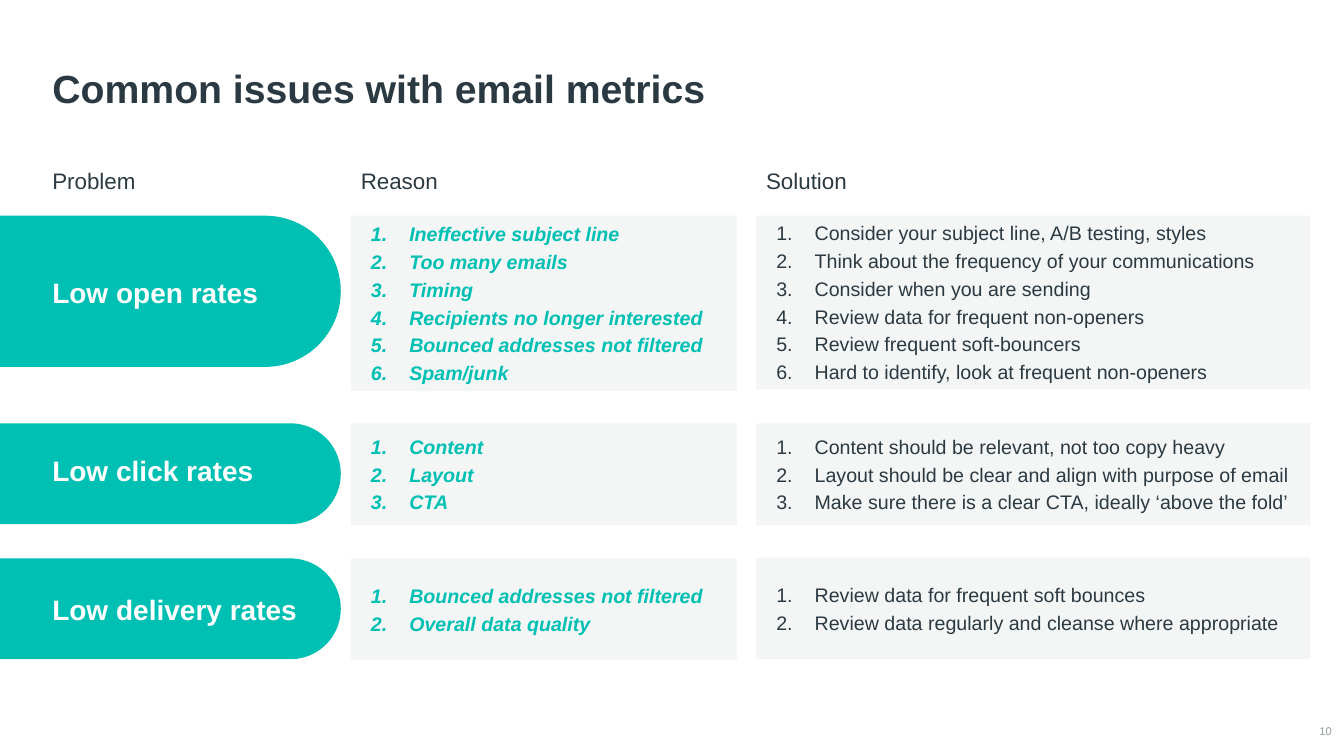
from dataclasses import dataclass
from lxml import etree
from pptx import Presentation
from pptx.dml.color import RGBColor
from pptx.enum.shapes import MSO_SHAPE
from pptx.enum.text import MSO_ANCHOR, MSO_AUTO_SIZE, PP_ALIGN
from pptx.oxml.ns import qn
from pptx.util import Inches, Pt

RECT = MSO_SHAPE.RECTANGLE
PILL = MSO_SHAPE.ROUND_2_SAME_RECTANGLE
MIDDLE, BOTTOM = MSO_ANCHOR.MIDDLE, MSO_ANCHOR.BOTTOM
LEFT, RIGHT = PP_ALIGN.LEFT, PP_ALIGN.RIGHT


@dataclass(frozen=True)
class Theme:
    font: str = "Arial"
    ink: str = "2B3A42"
    teal: str = "00BFB3"
    panel: str = "F4F5F5"
    white: str = "FFFFFF"
    gray: str = "959CA0"
    title: int = 28
    label: int = 20
    head: int = 16
    body: int = 14
    page: int = 8


theme = Theme()


def style(frame, size, color, bold=False, italic=False, anchor=MIDDLE, align=LEFT):
    frame.word_wrap = True
    frame.auto_size = MSO_AUTO_SIZE.NONE
    frame.vertical_anchor = anchor
    for par in frame.paragraphs:
        par.alignment = align
        for run in par.runs:
            font = run.font
            font.name, font.size = theme.font, Pt(size)
            font.bold, font.italic = bold, italic
            font.color.rgb = RGBColor.from_string(color)


def block(kind, left, top, width, height, color):
    """Add a flat filled shape without outline or shadow."""
    shape = slide.shapes.add_shape(
        kind, Inches(left), Inches(top), Inches(width), Inches(height))
    shape.shadow.inherit = False
    shape.fill.solid()
    shape.fill.fore_color.rgb = RGBColor.from_string(color)
    shape.line.fill.background()
    return shape


prs = Presentation()
prs.slide_width, prs.slide_height = Inches(13.33), Inches(7.5)
slide = prs.slides.add_slide(prs.slide_layouts[5])

# Title
title = slide.shapes.title
title.left, title.top = Inches(0.42), Inches(0.32)
title.width, title.height = Inches(12.4), Inches(0.84)
title.text_frame.text = "Common issues with email metrics"
title.text_frame.paragraphs[0].line_spacing = 0.9
style(title.text_frame, theme.title, theme.ink, bold=True, anchor=BOTTOM)

# Column heads
EDGE, REASON, SOLVE = 0.42, 3.48, 7.5
for left, text in ((EDGE, "Problem"), (REASON, "Reason"), (SOLVE, "Solution")):
    head = slide.shapes.add_textbox(
        Inches(left), Inches(1.61), Inches(2.82), Inches(0.37))
    head.text_frame.text = text
    style(head.text_frame, theme.head, theme.ink)

# Rows: problem, label top, pill top and height,
# then top, height and items of the reason and solution panels
rows = [
    ("Low open rates", 2.46, 2.14, 1.5,
     (2.14, 1.74, ["Ineffective subject line", "Too many emails", "Timing",
                   "Recipients no longer interested",
                   "Bounced addresses not filtered", "Spam/junk"]),
     (2.14, 1.72, ["Consider your subject line, A/B testing, styles",
                   "Think about the frequency of your communications",
                   "Consider when you are sending",
                   "Review data for frequent non-openers",
                   "Review frequent soft-bouncers",
                   "Hard to identify, look at frequent non-openers"])),
    ("Low click rates", 4.23, 4.2, 1,
     (4.2, 1.01, ["Content", "Layout", "CTA"]),
     (4.2, 1.01, ["Content should be relevant, not too copy heavy",
                  "Layout should be clear and align with purpose of email",
                  "Make sure there is a clear CTA, ideally ‘above the fold’"])),
    ("Low delivery rates", 5.6, 5.54, 1,
     (5.54, 1.01, ["Bounced addresses not filtered", "Overall data quality"]),
     (5.53, 1.01, ["Review data for frequent soft bounces",
                   "Review data regularly and cleanse where appropriate"])),
]
LONG = 3.38
for name, mid, top, high, reason, solve in rows:
    # The pill stands upright and turns a quarter about its centre
    pill = block(PILL, (LONG - high) / 2, top + (high - LONG) / 2,
                 high, LONG, theme.teal)
    pill.rotation = 90
    pill.adjustments[0], pill.adjustments[1] = 0.5, 0

    label = slide.shapes.add_textbox(
        Inches(EDGE), Inches(mid), Inches(2.65), Inches(0.88))
    label.text_frame.text = name
    style(label.text_frame, theme.label, theme.white, bold=True)

    for left, width, color, strong, (y, tall, items) in (
            (REASON, 3.83, theme.teal, True, reason),
            (SOLVE, 5.5, theme.ink, False, solve)):
        frame = block(RECT, left, y, width, tall, theme.panel).text_frame
        frame.margin_left = Inches(0.2)
        frame.text = "\n".join(items)
        for par in frame.paragraphs:
            props = par._p.get_or_add_pPr()
            props.set("marL", str(Inches(0.38)))
            props.set("indent", str(Inches(-0.38)))
            etree.SubElement(props, qn("a:buFont"), typeface=theme.font)
            etree.SubElement(props, qn("a:buAutoNum"), type="arabicPeriod")
            par.space_after = Pt(3)
        style(frame, theme.body, color, bold=strong, italic=strong)

# Page number
page = slide.shapes.add_textbox(
    Inches(12.82), Inches(7.16), Inches(0.39), Inches(0.19))
frame = page.text_frame
frame.margin_left = frame.margin_right = 0
frame.margin_top = frame.margin_bottom = 0
frame.text = "10"
style(frame, theme.page, theme.gray, align=RIGHT)

prs.save("out.pptx")
